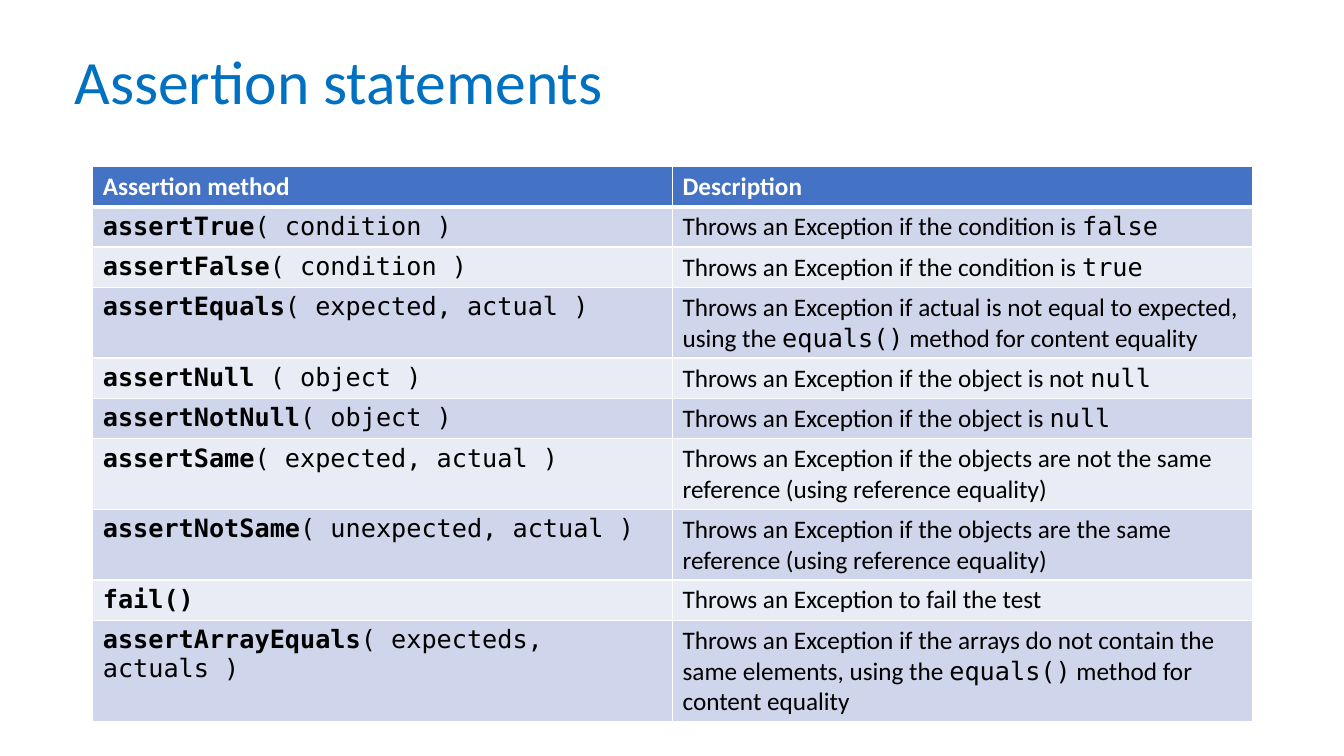
"""Build a slide that lists assertion methods with their descriptions."""
from dataclasses import dataclass

from lxml import etree
from pptx import Presentation
from pptx.dml.color import RGBColor
from pptx.enum.text import MSO_ANCHOR
from pptx.oxml.ns import qn
from pptx.slide import Slide
from pptx.table import _Cell
from pptx.text.text import _Paragraph
from pptx.util import Inches, Pt

MIDDLE = MSO_ANCHOR.MIDDLE
WHITE = RGBColor(0xFF, 0xFF, 0xFF)
BLACK = RGBColor(0x00, 0x00, 0x00)
TITLE_BLUE = RGBColor(0x00, 0x70, 0xC0)
HEADER_BLUE = RGBColor(0x44, 0x72, 0xC4)
BANDS = (RGBColor(0xCF, 0xD5, 0xEA), RGBColor(0xE9, 0xEB, 0xF5))
BODY_FONT = "Calibri"
CODE_FONT = "DejaVu Sans Mono"
THIN, THICK = Pt(1), Pt(3)


@dataclass(frozen=True)
class Span:
    """A stretch of text in one format."""

    text: str
    font: str = BODY_FONT
    bold: bool = False
    color: RGBColor = BLACK
    size: int = 18


@dataclass(frozen=True)
class Assertion:
    """A method, its arguments and the spans of its description."""

    method: str
    arguments: str
    description: tuple[Span, ...]


def code(text: str, bold: bool = False) -> Span:
    """Return a span in the code font."""
    return Span(text, CODE_FONT, bold)


EQUALITY = (code("equals()"), Span(" method for content equality"))
ASSERTIONS = (
    Assertion("assertTrue", "( condition )",
              (Span("Throws an Exception if the condition is "), code("false"))),
    Assertion("assertFalse", "( condition )",
              (Span("Throws an Exception if the condition is "), code("true"))),
    Assertion("assertEquals", "( expected, actual )",
              (Span("Throws an Exception if actual is not equal to expected, using the "),
               *EQUALITY)),
    Assertion("assertNull", " ( object )",
              (Span("Throws an Exception if the object is not "), code("null"))),
    Assertion("assertNotNull", "( object )",
              (Span("Throws an Exception if the object is "), code("null"))),
    Assertion("assertSame", "( expected, actual )",
              (Span("Throws an Exception if the objects are not the same reference "
                    "(using reference equality)"),)),
    Assertion("assertNotSame", "( unexpected, actual )",
              (Span("Throws an Exception if the objects are the same reference "
                    "(using reference equality)"),)),
    Assertion("fail()", "", (Span("Throws an Exception to fail the test"),)),
    Assertion("assertArrayEquals", "( expecteds, actuals )",
              (Span("Throws an Exception if the arrays do not contain the same elements, "
                    "using the "), *EQUALITY)),
)
HEADINGS = ("Assertion method", "Description")


def write_spans(para: _Paragraph, spans: tuple[Span, ...]) -> None:
    """Add each span that has text to the paragraph."""
    for span in spans:
        if not span.text:
            continue
        run = para.add_run()
        run.text = span.text
        formats = {"name": span.font, "size": Pt(span.size), "bold": span.bold}
        for name, value in formats.items():
            setattr(run.font, name, value)
        run.font.color.rgb = span.color


def draw_borders(cell: _Cell, top: int, bottom: int) -> None:
    """Give the cell white borders."""
    properties = cell._tc.get_or_add_tcPr()
    widths = {"a:lnL": THIN, "a:lnR": THIN, "a:lnT": top, "a:lnB": bottom}
    for tag, width in widths.items():
        line = etree.SubElement(properties, qn(tag), w=str(int(width)))
        fill = etree.SubElement(line, qn("a:solidFill"))
        etree.SubElement(fill, qn("a:srgbClr"), val=str(WHITE))


def add_title(page: Slide) -> None:
    """Add the slide title."""
    box = page.shapes.add_textbox(Inches(0.64), Inches(0.4), Inches(6.36), Inches(0.88))
    frame = box.text_frame
    for name, value in {"word_wrap": True, "vertical_anchor": MIDDLE}.items():
        setattr(frame, name, value)
    para = frame.paragraphs[0]
    para.line_spacing = 0.9
    write_spans(para, (Span("Assertion statements", color=TITLE_BLUE, size=44),))


def add_assertion_table(page: Slide) -> None:
    """Add the table of methods with a header and banded rows."""
    rows = [tuple((Span(text, bold=True, color=WHITE),) for text in HEADINGS)]
    rows += [((code(item.method, True), code(item.arguments)), item.description)
             for item in ASSERTIONS]
    row_height = Inches(0.4)
    table = page.shapes.add_table(len(rows), len(HEADINGS), Inches(0.92), Inches(1.65),
                                  Inches(11.5), row_height * len(rows)).table
    table.horz_banding = False
    for row_index, row in enumerate(rows):
        top = THICK if row_index == 1 else THIN
        bottom = THICK if row_index == 0 else THIN
        color = BANDS[(row_index - 1) % 2] if row_index else HEADER_BLUE
        for column_index, spans in enumerate(row):
            cell = table.cell(row_index, column_index)
            draw_borders(cell, top, bottom)
            cell.fill.solid()
            cell.fill.fore_color.rgb = color
            write_spans(cell.text_frame.paragraphs[0], spans)


def main() -> None:
    """Build and save the deck."""
    deck = Presentation()
    deck.slide_width, deck.slide_height = Inches(13.33), Inches(7.5)
    page = deck.slides.add_slide(deck.slide_layouts[6])
    add_title(page)
    add_assertion_table(page)
    deck.save("out.pptx")


if __name__ == "__main__":
    main()
